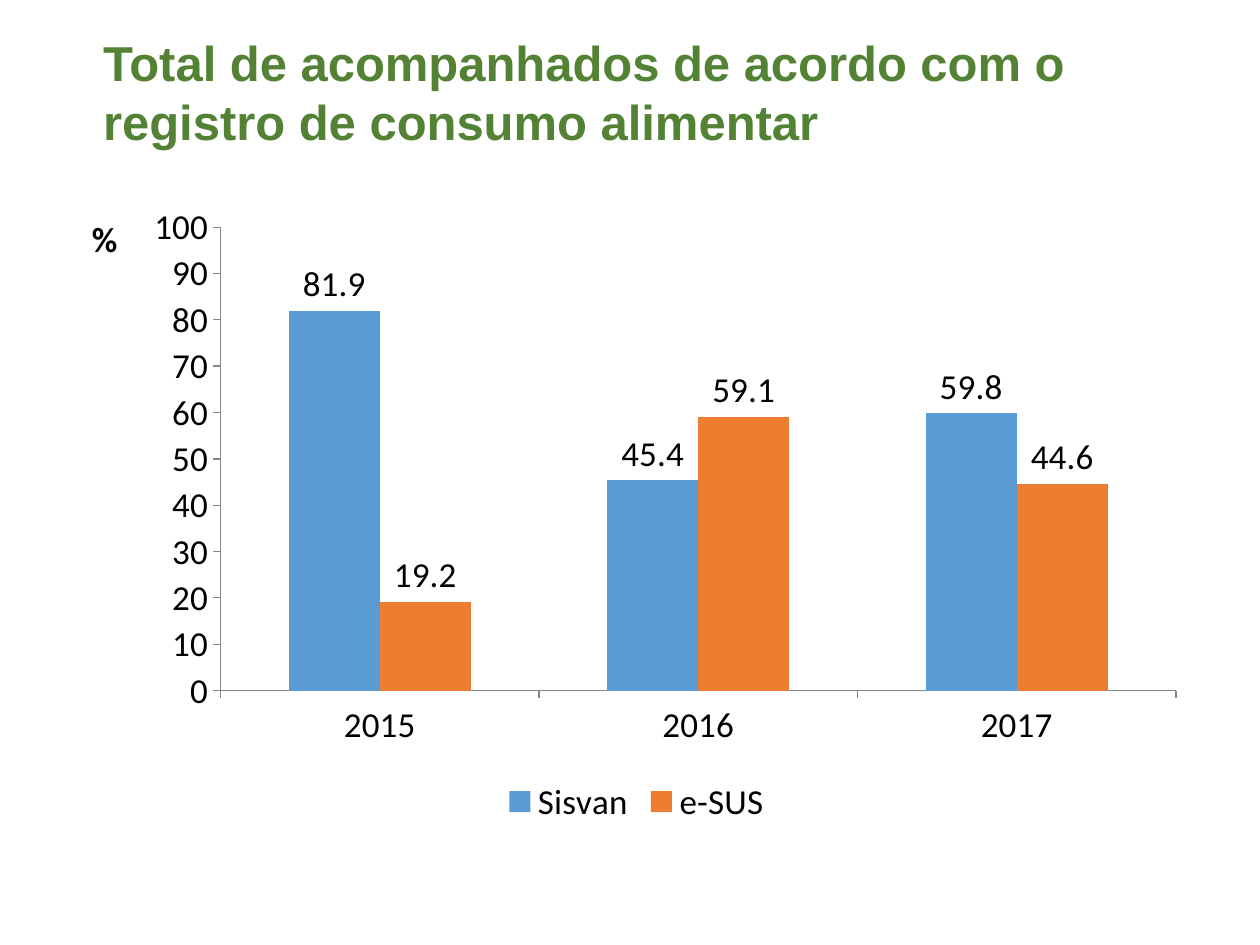
import pptx
import pptx.chart.data
import pptx.dml.color
import pptx.enum.chart
import pptx.enum.text
import pptx.oxml
import pptx.oxml.ns
import pptx.util

Cm = pptx.util.Cm
Pt = pptx.util.Pt
RGB = pptx.dml.color.RGBColor.from_string
qn = pptx.oxml.ns.qn

COLORS = {
    "heading": "548235",
    "text": "000000",
    "axis": "878787",
    "Sisvan": "5B9BD5",
    "e-SUS": "ED7D31",
}
YEARS = ["2015", "2016", "2017"]
PERCENTAGES = {
    "Sisvan": [81.9, 45.4, 59.8],
    "e-SUS": [19.2, 59.1, 44.6],
}


def place(element, index, fractions, inner=False):
    """Fix a chart part's place, given as fractions of the chart area."""
    for old in element.findall(qn("c:layout")):
        element.remove(old)
    target = '<c:layoutTarget val="inner"/>' if inner else ""
    modes = "".join(f'<c:{key}Mode val="edge"/>' for key in "xy")
    sizes = "".join(f'<c:{key} val="{value}"/>' for key, value in fractions.items())
    element.insert(index, pptx.oxml.parse_xml(
        f'<c:layout {pptx.oxml.ns.nsdecls("c")}><c:manualLayout>'
        f"{target}{modes}{sizes}</c:manualLayout></c:layout>"))


presentation = pptx.Presentation()
presentation.slide_width = Cm(25.4)
presentation.slide_height = Cm(19.05)
slide = presentation.slides.add_slide(presentation.slide_layouts[6])

# Heading
heading = slide.shapes.add_textbox(Cm(1.83), Cm(0.53), Cm(22.66), Cm(2.64)).text_frame
heading.word_wrap = True
heading.auto_size = pptx.enum.text.MSO_AUTO_SIZE.SHAPE_TO_FIT_TEXT
heading_run = heading.paragraphs[0].add_run()
heading_run.text = "Total de acompanhados de acordo com o registro de consumo alimentar"
heading_run.font.name = "Arial"
heading_run.font.size = Pt(28)
heading_run.font.bold = True
heading_run.font.color.rgb = RGB(COLORS["heading"])

# Chart
chart_data = pptx.chart.data.CategoryChartData(number_format="0.0")
chart_data.categories = YEARS
for system, values in PERCENTAGES.items():
    chart_data.add_series(system, values)
chart = slide.shapes.add_chart(
    pptx.enum.chart.XL_CHART_TYPE.COLUMN_CLUSTERED,
    Cm(1.5), Cm(3.94), Cm(22.66), Cm(12.8), chart_data).chart
chart.has_title = False
chart.font.name = "Calibri"
chart.font.size = Pt(20)
chart.font.color.rgb = RGB(COLORS["text"])

columns = chart.plots[0]
columns.gap_width = 150
columns.overlap = 0
columns.vary_by_categories = False
for series in columns.series:
    series.format.fill.solid()
    series.format.fill.fore_color.rgb = RGB(COLORS[series.name])
    labels = series.data_labels
    labels.show_value = True
    labels.number_format = "0.0"
    labels.number_format_is_linked = False
    labels.position = pptx.enum.chart.XL_LABEL_POSITION.OUTSIDE_END

# Axes
years_axis = chart.category_axis
percent_axis = chart.value_axis
for axis in (years_axis, percent_axis):
    axis.has_major_gridlines = False
    axis.major_tick_mark = pptx.enum.chart.XL_TICK_MARK.OUTSIDE
    axis.minor_tick_mark = pptx.enum.chart.XL_TICK_MARK.NONE
    axis.format.line.color.rgb = RGB(COLORS["axis"])
    axis.format.line.width = Pt(0.75)
percent_axis.minimum_scale = 0
percent_axis.maximum_scale = 100
percent_axis.major_unit = 10
percent_axis.tick_labels.number_format = "0"
percent_axis.tick_labels.number_format_is_linked = False

percent_title = percent_axis.axis_title
percent_run = percent_title.text_frame.paragraphs[0].add_run()
percent_run.text = "%"
percent_run.font.name = "Calibri"
percent_run.font.size = Pt(20)
percent_run.font.bold = True
percent_run.font.color.rgb = RGB(COLORS["text"])
title_body = next(percent_title._element.iter(qn("a:bodyPr")))
title_body.set("rot", "0")
title_body.set("vert", "horz")
place(percent_title._element, 1, {"x": 0.01, "y": 0.02})

plot_area = next(chart._chartSpace.iter(qn("c:plotArea")))
place(plot_area, 0, {"x": 0.13, "y": 0.05, "w": 0.85, "h": 0.73}, inner=True)

# Legend
chart.has_legend = True
chart.legend.position = pptx.enum.chart.XL_LEGEND_POSITION.BOTTOM
chart.legend.include_in_layout = False

presentation.save("out.pptx")
